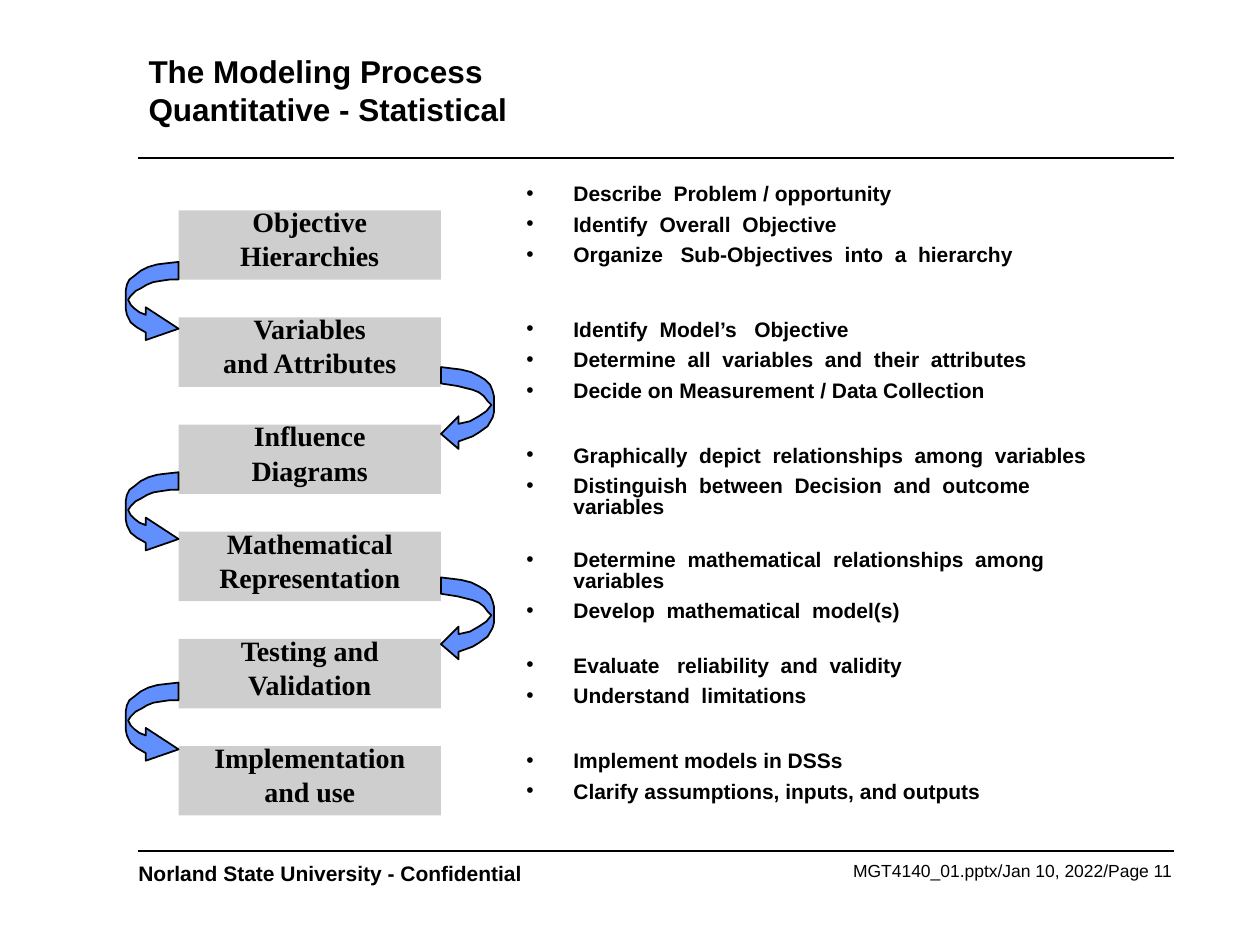
"""Build a slide pairing six modeling stages with the tasks of each stage."""
from lxml import etree
from pptx import Presentation
from pptx.dml.color import RGBColor
from pptx.enum.shapes import MSO_CONNECTOR, MSO_SHAPE
from pptx.enum.text import MSO_ANCHOR, MSO_AUTO_SIZE, PP_ALIGN
from pptx.oxml.ns import qn
from pptx.util import Cm, Pt

RECTANGLE = MSO_SHAPE.RECTANGLE
STRAIGHT = MSO_CONNECTOR.STRAIGHT
TOP, MIDDLE = MSO_ANCHOR.TOP, MSO_ANCHOR.MIDDLE
LEFT, CENTER, RIGHT = PP_ALIGN.LEFT, PP_ALIGN.CENTER, PP_ALIGN.RIGHT
BLACK = RGBColor(0x00, 0x00, 0x00)
GRAY = RGBColor(0xCE, 0xCE, 0xCE)
BLUE = RGBColor(0x61, 0x8F, 0xFD)

TITLE = "The Modeling Process\vQuantitative - Statistical"
ORGANIZATION = "Norland State University - Confidential"
PAGE_LABEL = "MGT4140_01.pptx/Jan 10, 2022/Page 11"
STAGES = [
    (("Objective", "Hierarchies"), 3.61,
     ("Describe  Problem / opportunity",
      "Identify  Overall  Objective",
      "Organize   Sub-Objectives  into  a  hierarchy")),
    (("Variables", "and Attributes"), 6.35,
     ("Identify  Model’s   Objective",
      "Determine  all  variables  and  their  attributes",
      "Decide on Measurement / Data Collection")),
    (("Influence", "Diagrams"), 8.89,
     ("Graphically  depict  relationships  among  variables",
      "Distinguish  between  Decision  and  outcome  variables")),
    (("Mathematical", "Representation"), 11.0,
     ("Determine  mathematical  relationships  among  variables",
      "Develop  mathematical  model(s)")),
    (("Testing and", "Validation"), 13.12,
     ("Evaluate   reliability  and  validity",
      "Understand  limitations")),
    (("Implementation", "and use"), 15.04,
     ("Implement models in DSSs",
      "Clarify assumptions, inputs, and outputs")),
]

BOX_LEFT, BOX_TOP, BOX_STEP = 3.6, 4.24, 2.16
BOX_WIDTH, BOX_HEIGHT = 5.29, 1.4
ARROW_TOP, ARROW_STEP = 5.28, 2.12
ARROW_UNIT = Cm(2.54) / 100
LEFT_ARROW = [
    (0, 0), (-9, 1), (-17, 2), (-24, 4), (-30, 7), (-35, 11), (-39, 14),
    (-41, 18), (-42, 23), (-42, 37), (-41, 42), (-38, 48), (-33, 52),
    (-26, 56), (-26, 62), (0, 53), (-26, 36), (-26, 42), (-31, 40),
    (-35, 37), (-38, 34), (-40, 30), (-38, 27), (-34, 23), (-30, 21),
    (-25, 18), (-20, 16), (-14, 15), (-7, 14), (0, 14)]
RIGHT_ARROW = [
    (0, 0), (8, 1), (16, 2), (24, 4), (30, 7), (35, 10), (39, 14), (41, 19),
    (42, 23), (42, 36), (41, 40), (37, 47), (30, 52), (25, 55), (14, 59),
    (14, 65), (0, 53), (14, 39), (14, 45), (23, 43), (30, 39), (36, 35),
    (40, 30), (37, 27), (34, 23), (30, 20), (25, 18), (13, 15), (0, 13)]


def write(shape, lines, size, font="Arial", bold=True, align=LEFT,
          anchor=TOP, spacing=None):
    frame = shape.text_frame
    frame.word_wrap = True
    frame.auto_size = MSO_AUTO_SIZE.NONE
    frame.vertical_anchor = anchor
    frame.text = "\n".join(lines)
    for paragraph in frame.paragraphs:
        paragraph.alignment = align
        paragraph.font.name = font
        paragraph.font.size = Pt(size)
        paragraph.font.bold = bold
        paragraph.font.color.rgb = BLACK
        if spacing:
            paragraph.line_spacing = spacing
            paragraph.space_before = Pt(size / 2)


def add_text(slide, left, top, width, height, lines, size, **style):
    shape = slide.shapes.add_textbox(Cm(left), Cm(top), Cm(width), Cm(height))
    write(shape, lines, size, **style)
    return shape


def add_bullets(shape):
    for paragraph in shape.text_frame.paragraphs:
        properties = paragraph._p.get_or_add_pPr()
        properties.set("marL", str(Cm(0.95)))
        properties.set("indent", str(-Cm(0.95)))
        etree.SubElement(properties, qn("a:buFont")).set("typeface", "Arial")
        etree.SubElement(properties, qn("a:buChar")).set("char", "•")
        defaults = properties.find(qn("a:defRPr"))
        if defaults is not None:
            properties.append(defaults)


def add_rule(slide, top):
    rule = slide.shapes.add_connector(
        STRAIGHT, Cm(2.79), Cm(top), Cm(23.67), Cm(top))
    rule.line.color.rgb = BLACK
    rule.line.width = Pt(1)
    etree.SubElement(rule._element.spPr, qn("a:effectLst"))


def add_stage_box(slide, top, lines):
    box = slide.shapes.add_shape(
        RECTANGLE, Cm(BOX_LEFT), Cm(top), Cm(BOX_WIDTH), Cm(BOX_HEIGHT))
    box.shadow.inherit = False
    box.fill.solid()
    box.fill.fore_color.rgb = GRAY
    box.line.fill.background()
    write(box, lines, 16, font="Times New Roman", align=CENTER, spacing=0.6)


def add_arrow(slide, left, top, points):
    builder = slide.shapes.build_freeform(*points[0], scale=ARROW_UNIT)
    builder.add_line_segments(points[1:], close=True)
    arrow = builder.convert_to_shape(Cm(left), Cm(top))
    arrow.shadow.inherit = False
    arrow.fill.solid()
    arrow.fill.fore_color.rgb = BLUE
    arrow.line.color.rgb = BLACK
    arrow.line.width = Pt(1)


def main():
    presentation = Presentation()
    presentation.slide_width, presentation.slide_height = Cm(25.4), Cm(19.05)
    slide = presentation.slides.add_slide(presentation.slide_layouts[5])

    title = slide.shapes.title
    title.left, title.top = Cm(2.74), Cm(0.64)
    title.width, title.height = Cm(20.96), Cm(2.34)
    write(title, [TITLE], 18, anchor=MIDDLE)

    add_text(slide, 14.17, 17.22, 9.7, 0.66, [PAGE_LABEL], 10,
             bold=False, align=RIGHT)
    add_text(slide, 2.54, 17.22, 9.75, 0.76, [ORGANIZATION], 12)
    for top in (3.18, 17.15):
        add_rule(slide, top)

    for index, (name, tasks_top, tasks) in enumerate(STAGES):
        add_stage_box(slide, BOX_TOP + index * BOX_STEP, name)
        add_bullets(add_text(slide, 10.36, tasks_top, 12.7,
                             0.66 * len(tasks), tasks, 12, spacing=0.8))

    for index in range(len(STAGES) - 1):
        on_right = index % 2
        add_arrow(slide, BOX_LEFT + on_right * BOX_WIDTH,
                  ARROW_TOP + index * ARROW_STEP,
                  RIGHT_ARROW if on_right else LEFT_ARROW)

    presentation.save("out.pptx")


if __name__ == "__main__":
    main()
